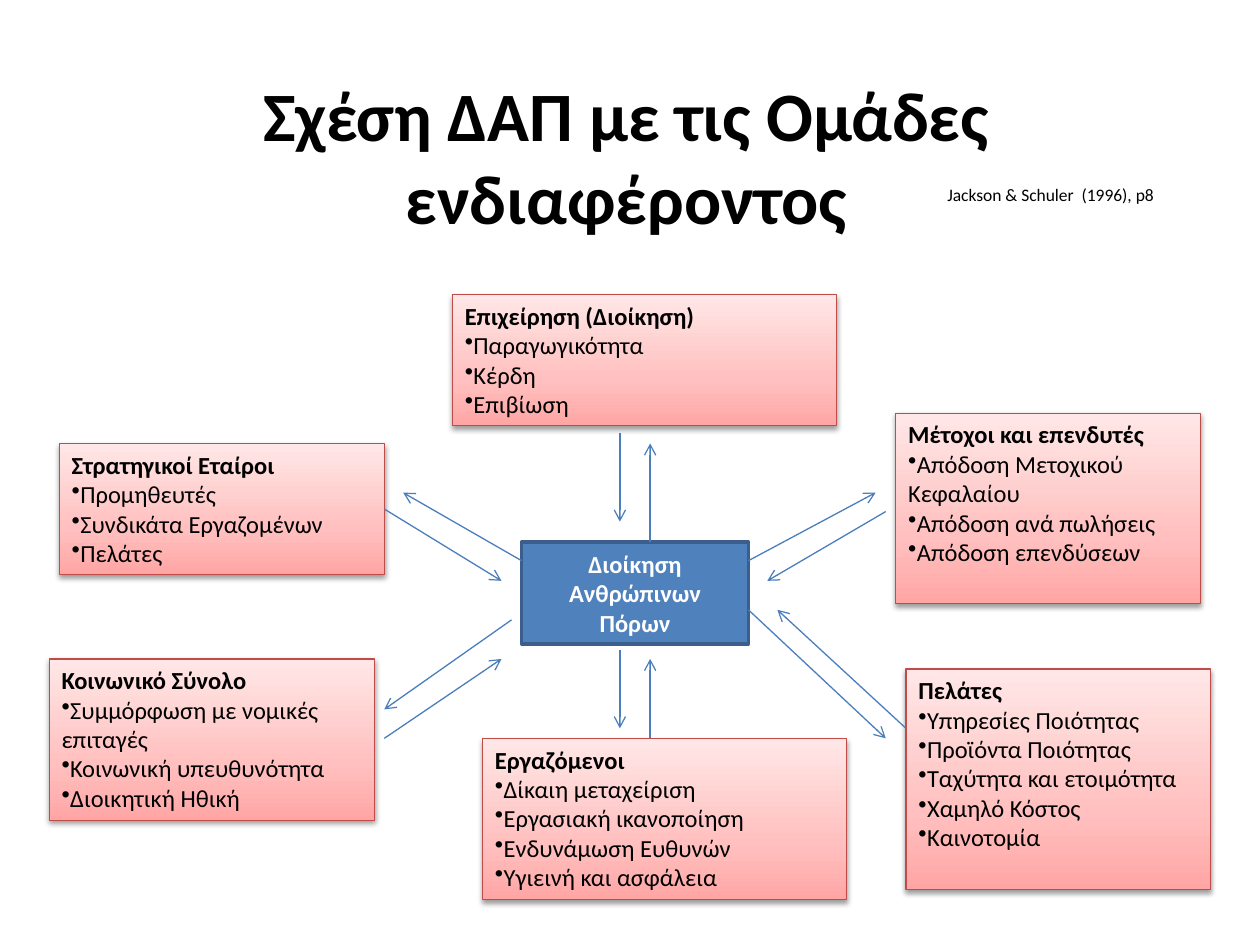
from dataclasses import dataclass

from lxml.etree import SubElement
from pptx import Presentation
from pptx.dml.color import RGBColor
from pptx.enum.shapes import MSO_CONNECTOR as Connector, MSO_SHAPE as Shape
from pptx.enum.text import MSO_ANCHOR as Anchor, MSO_AUTO_SIZE as AutoSize, PP_ALIGN as Align
from pptx.oxml import parse_xml
from pptx.oxml.ns import nsdecls, qn
from pptx.util import Inches, Pt


@dataclass(frozen=True)
class Theme:
    font: str = "Calibri"
    ink: str = "000000"
    white: str = "FFFFFF"
    hub_fill: str = "4F81BD"
    hub_line: str = "3A5F8C"
    arrow: str = "4B7EBC"
    group_line: str = "BF4C48"
    group_stops: tuple = ((0, "FFA6A5"), (35, "FFC0BF"), (100, "FFE7E7"))
    title_size: float = 39.6
    body_size: float = 14
    citation_size: float = 10


THEME = Theme()

HUB_BOX = (4.14, 4.3, 1.8, 0.81)

GROUPS = [
    ((0.47, 3.52, 2.58, 1.04), "Στρατηγικοί Εταίροι",
     ["Προμηθευτές", "Συνδικάτα Εργαζομένων", "Πελάτες"]),
    ((0.39, 5.23, 2.58, 1.28), "Κοινωνικό Σύνολο",
     ["Συμμόρφωση με νομικές επιταγές", "Κοινωνική υπευθυνότητα", "Διοικητική Ηθική"]),
    ((3.83, 5.86, 2.89, 1.28), "Εργαζόμενοι",
     ["Δίκαιη μεταχείριση", "Εργασιακή ικανοποίηση", "Ενδυνάμωση Ευθυνών",
      "Υγιεινή και ασφάλεια"]),
    ((7.19, 5.31, 2.42, 1.75), "Πελάτες",
     ["Υπηρεσίες Ποιότητας", "Προϊόντα Ποιότητας", "Ταχύτητα και ετοιμότητα",
      "Χαμηλό Κόστος", "Καινοτομία"]),
    ((7.11, 3.28, 2.42, 1.51), "Μέτοχοι και επενδυτές",
     ["Απόδοση Μετοχικού Κεφαλαίου", "Απόδοση ανά πωλήσεις", "Απόδοση επενδύσεων"]),
    ((3.59, 2.34, 3.05, 1.04), "Επιχείρηση (Διοίκηση)",
     ["Παραγωγικότητα", "Κέρδη", "Επιβίωση"]),
]

HUB_ARROWS = [
    ((0.78, -0.86), (0.78, -0.16)),
    ((1.8, 0.54), (2.89, 1.56)),
    ((2.89, -0.24), (1.95, 0.31)),
    ((0.78, 0.86), (0.78, 1.48)),
    ((-1.09, 1.56), (-0.16, 0.93)),
    ((-1.09, -0.26), (-0.16, 0.31)),
    ((1.02, 0), (1.02, -0.78)),
    ((0, 0.15), (-0.94, -0.39)),
    ((-0.08, 0.62), (-1.09, 1.33)),
    ((1.02, 1.56), (1.02, 0.93)),
    ((1.8, 0.15), (2.81, -0.39)),
    ((3.05, 1.48), (2.03, 0.54)),
]


def rgb(value):
    return RGBColor.from_string(value)


def inches(box):
    return [Inches(length) for length in box]


def write(paragraph, text, size=THEME.body_size, color=THEME.ink, bold=False,
          align=Align.LEFT, bullet=False):
    paragraph.alignment = align
    if bullet:
        SubElement(paragraph._p.get_or_add_pPr(), qn("a:buChar"), char="•")
    run = paragraph.add_run()
    run.text = text
    run.font.name = THEME.font
    run.font.size = Pt(size)
    run.font.bold = bold
    run.font.color.rgb = rgb(color)


def add_box(slide, box, line, width, anchor):
    panel = slide.shapes.add_shape(Shape.RECTANGLE, *inches(box))
    panel.shadow.inherit = False
    panel.line.color.rgb = rgb(line)
    panel.line.width = Pt(width)
    panel.text_frame.word_wrap = True
    panel.text_frame.vertical_anchor = anchor
    return panel


def apply_group_style(panel):
    properties = panel._element.spPr
    stops = "".join(
        f'<a:gs pos="{position * 1000}"><a:srgbClr val="{color}"/></a:gs>'
        for position, color in THEME.group_stops)
    gradient = parse_xml(
        f'<a:gradFill {nsdecls("a")} rotWithShape="1"><a:gsLst>{stops}</a:gsLst>'
        '<a:lin ang="16200000" scaled="0"/></a:gradFill>')
    properties.find(qn("a:prstGeom")).addnext(gradient)
    effects = properties.find(qn("a:effectLst"))
    effects.append(parse_xml(
        f'<a:outerShdw {nsdecls("a")} blurRad="{Pt(3.1)}" dist="{Pt(1.6)}" '
        'dir="5400000" rotWithShape="0"><a:srgbClr val="000000">'
        '<a:alpha val="38000"/></a:srgbClr></a:outerShdw>'))


def add_title(slide, box, text):
    title = slide.shapes.title
    title.left, title.top, title.width, title.height = inches(box)
    frame = title.text_frame
    frame.auto_size = AutoSize.NONE
    frame.vertical_anchor = Anchor.MIDDLE
    write(frame.paragraphs[0], text, size=THEME.title_size, bold=True, align=Align.CENTER)


def add_hub(slide, box, text):
    hub = add_box(slide, box, THEME.hub_line, 2, Anchor.MIDDLE)
    hub.fill.solid()
    hub.fill.fore_color.rgb = rgb(THEME.hub_fill)
    write(hub.text_frame.paragraphs[0], text, color=THEME.white, bold=True,
          align=Align.CENTER)


def add_group(slide, box, heading, interests):
    group = add_box(slide, box, THEME.group_line, 0.75, Anchor.TOP)
    apply_group_style(group)
    frame = group.text_frame
    write(frame.paragraphs[0], heading, bold=True)
    for interest in interests:
        write(frame.add_paragraph(), interest, bullet=True)


def add_hub_arrows(slide, box):
    left, top = box[:2]
    for (x1, y1), (x2, y2) in HUB_ARROWS:
        ends = inches((left + x1, top + y1, left + x2, top + y2))
        arrow = slide.shapes.add_connector(Connector.STRAIGHT, *ends)
        arrow.line.color.rgb = rgb(THEME.arrow)
        arrow.line.width = Pt(0.75)
        SubElement(arrow.line._get_or_add_ln(), qn("a:tailEnd"), type="arrow")
        SubElement(arrow._element.spPr, qn("a:effectLst"))


def add_citation(slide, box, text):
    frame = slide.shapes.add_textbox(*inches(box)).text_frame
    frame.word_wrap = True
    write(frame.paragraphs[0], text, size=THEME.citation_size)


def main():
    deck = Presentation()
    deck.slide_width, deck.slide_height = Inches(10), Inches(7.5)
    slide = deck.slides.add_slide(deck.slide_layouts.get_by_name("Title Only"))
    add_title(slide, (0.47, 0.47, 9, 1.53), "Σχέση ΔΑΠ με τις Ομάδες ενδιαφέροντος")
    add_hub(slide, HUB_BOX, "Διοίκηση Ανθρώπινων Πόρων")
    for box, heading, interests in GROUPS:
        add_group(slide, box, heading, interests)
    add_hub_arrows(slide, HUB_BOX)
    add_citation(slide, (7.42, 1.41, 2.58, 0.27), "Jackson & Schuler  (1996), p8")
    deck.save("out.pptx")


if __name__ == "__main__":
    main()
